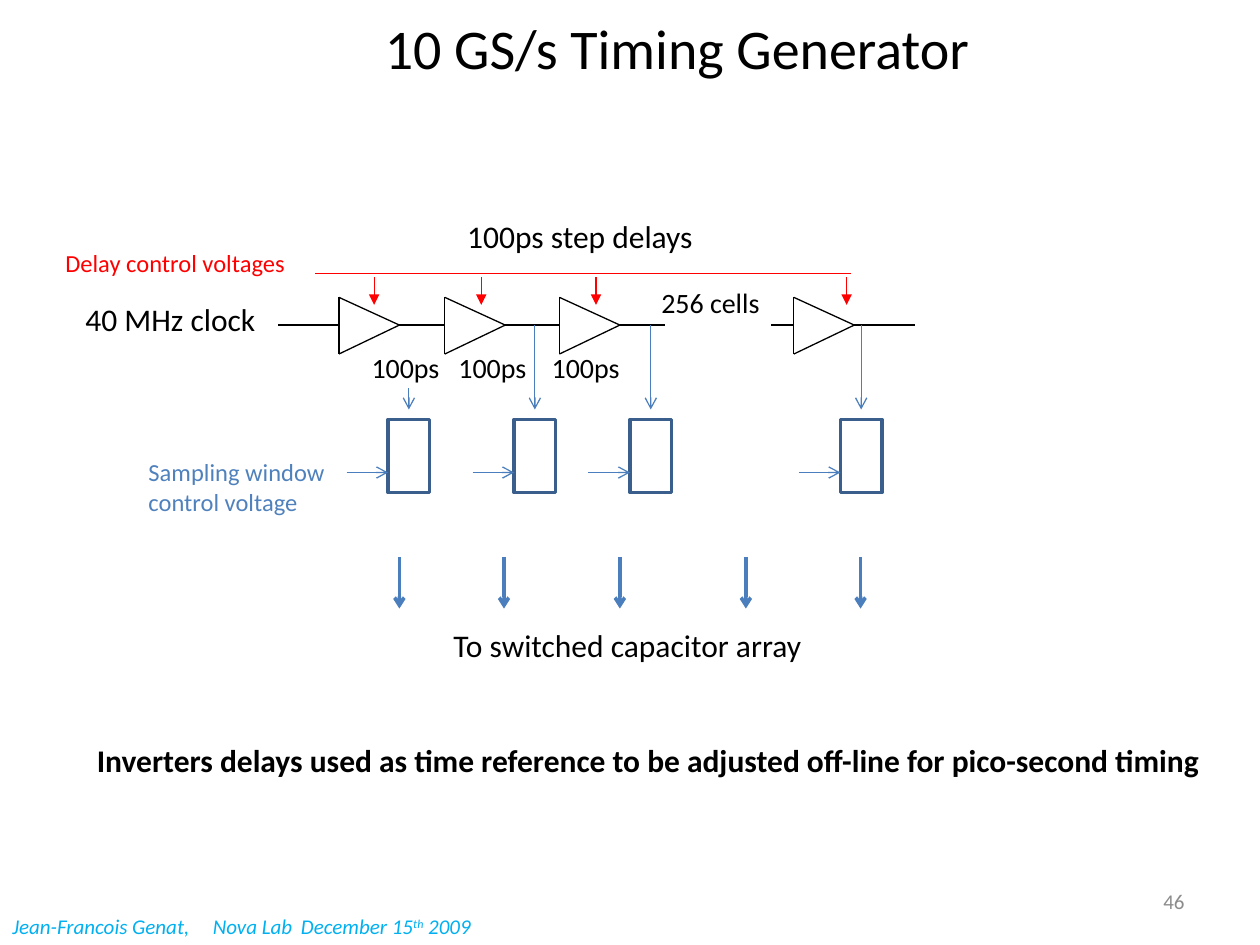
from dataclasses import dataclass

from lxml import etree
from pptx import Presentation
from pptx.dml.color import RGBColor
from pptx.enum.shapes import MSO_CONNECTOR, MSO_SHAPE
from pptx.enum.text import MSO_ANCHOR, PP_ALIGN
from pptx.oxml.ns import qn
from pptx.util import Inches, Pt

STRAIGHT = MSO_CONNECTOR.STRAIGHT
RECTANGLE = MSO_SHAPE.RECTANGLE
LEFT, CENTER, RIGHT = PP_ALIGN.LEFT, PP_ALIGN.CENTER, PP_ALIGN.RIGHT
TOP, MIDDLE = MSO_ANCHOR.TOP, MSO_ANCHOR.MIDDLE

FONT = "Calibri"
COLORS = {
    "black": "000000",
    "red": "FF0000",
    "blue": "4B7EBC",
    "cell_border": "3A5F8C",
    "window_label": "4F81BD",
    "page_number": "8C8C8C",
    "footer": "00B0F0",
}

# Delay line
INVERTER_LEFTS = (2.69, 3.53, 4.44, 6.3)
INVERTER_WIDTH = 0.48
INVERTER_TOP, SIGNAL_Y, INVERTER_BOTTOM = 2.36, 2.58, 2.81
WIRES = ((2.21, 2.69), (3.17, 3.53), (4.01, 4.44), (4.92, 5.28), (6.12, 6.3), (6.78, 7.26))
CONTROL_XS = (2.97, 3.82, 4.73, 6.72)

# Sampling cells
CELL_LEFTS = (3.08, 4.08, 5, 6.67)
CELL_WIDTH, CELL_HEIGHT, CELL_TOP = 0.33, 0.58, 3.33
WINDOW_Y = 3.75
OUTPUT_XS = (3.17, 4, 4.92, 5.92, 6.83)


@dataclass(frozen=True)
class Label:
    text: str
    left: float
    top: float
    width: float
    height: float
    size: int
    color: str = "black"
    align: PP_ALIGN = LEFT
    anchor: MSO_ANCHOR = TOP
    bold: bool = False
    wrap: bool = False
    tabs: tuple[float, ...] = ()


LABELS = (
    Label("10 GS/s Timing Generator", 0.75, 0, 9.25, 0.75, 32, align=CENTER, anchor=MIDDLE, wrap=True),
    Label("100ps\t100ps\t100ps", 2.85, 2.73, 2.45, 0.37, 16, wrap=True, tabs=(0.69, 1.43)),
    Label("256 cells", 5.15, 2.22, 0.99, 0.37, 16),
    Label("100ps step delays", 3.61, 1.67, 2.02, 0.4, 18),
    Label("40 MHz clock", 0.58, 2.33, 1.68, 0.4, 18),
    Label("46", 7.17, 6.95, 2.33, 0.4, 12, "page_number", RIGHT, MIDDLE, wrap=True),
    Label("To switched capacitor array", 3.5, 4.92, 2.99, 0.4, 18),
    Label("Delay control voltages", 0.42, 1.92, 1.96, 0.34, 14, "red"),
    Label("Sampling window\ncontrol voltage", 1.08, 3.58, 1.61, 0.57, 14, "window_label"),
    Label(
        "Inverters delays used as time reference to be adjusted off-line for pico-second timing",
        0.67, 5.83, 9.04, 0.4, 18, bold=True,
    ),
)
FOOTER = Label(
    "Jean-Francois Genat,\tNova Lab\tDecember 15", 0, 7.2, 3.92, 0.3, 12, "footer",
    wrap=True, tabs=(1.59, 2.29),
)


def rgb(color: str) -> RGBColor:
    return RGBColor.from_string(COLORS[color])


def set_tabs(paragraph, positions: tuple[float, ...]) -> None:
    tab_list = etree.SubElement(paragraph._p.get_or_add_pPr(), qn("a:tabLst"))
    for position in positions:
        etree.SubElement(tab_list, qn("a:tab"), pos=str(Inches(position)), algn="l")


def style_run(run, label: Label, italic: bool = False) -> None:
    run.font.name = FONT
    run.font.size = Pt(label.size)
    run.font.bold = label.bold
    run.font.italic = italic
    run.font.color.rgb = rgb(label.color)


def add_label(slide, label: Label):
    box = slide.shapes.add_textbox(
        Inches(label.left), Inches(label.top), Inches(label.width), Inches(label.height)
    )
    frame = box.text_frame
    frame.text = label.text
    frame.word_wrap = label.wrap
    frame.vertical_anchor = label.anchor
    for paragraph in frame.paragraphs:
        paragraph.alignment = label.align
        if label.tabs:
            set_tabs(paragraph, label.tabs)
        for run in paragraph.runs:
            style_run(run, label)
    return frame


def add_footer(slide) -> None:
    """Add the italic credit line with its raised ordinal suffix."""
    paragraph = add_label(slide, FOOTER).paragraphs[0]
    suffix, year = paragraph.add_run(), paragraph.add_run()
    suffix.text, year.text = "th", " 2009"
    for run in paragraph.runs:
        style_run(run, FOOTER, italic=True)
    suffix._r.get_or_add_rPr().set("baseline", "30000")


def add_line(
    slide, x1: float, y1: float, x2: float, y2: float,
    color: str = "black", width: float = 0.75, head: str = "",
) -> None:
    """Draw a straight line, with an arrowhead at its end if head is given."""
    line = slide.shapes.add_connector(STRAIGHT, Inches(x1), Inches(y1), Inches(x2), Inches(y2))
    line.line.color.rgb = rgb(color)
    line.line.width = Pt(width)
    if head:
        etree.SubElement(line.line._get_or_add_ln(), qn("a:tailEnd"), type=head)
    etree.SubElement(line._element.spPr, qn("a:effectLst"))


def add_inverter(slide, left: float) -> None:
    tip = left + INVERTER_WIDTH
    add_line(slide, left, INVERTER_TOP, left, INVERTER_BOTTOM)
    add_line(slide, left, INVERTER_BOTTOM, tip, SIGNAL_Y)
    add_line(slide, left, INVERTER_TOP, tip, SIGNAL_Y)


def add_sampling_cell(slide, left: float, tap_top: float) -> None:
    """Draw a cell with its tap from the delay line and its window control."""
    cell = slide.shapes.add_shape(
        RECTANGLE, Inches(left), Inches(CELL_TOP), Inches(CELL_WIDTH), Inches(CELL_HEIGHT)
    )
    cell.shadow.inherit = False
    cell.fill.background()
    cell.line.color.rgb = rgb("cell_border")
    cell.line.width = Pt(2)
    center = left + CELL_WIDTH / 2
    add_line(slide, center, tap_top, center, 3.25, "blue", head="arrow")
    add_line(slide, left - CELL_WIDTH, WINDOW_Y, left, WINDOW_Y, "blue", head="arrow")


def main() -> None:
    presentation = Presentation()
    presentation.slide_width, presentation.slide_height = Inches(10), Inches(7.5)
    slide = presentation.slides.add_slide(presentation.slide_layouts[6])

    for left in INVERTER_LEFTS:
        add_inverter(slide, left)
    for start, end in WIRES:
        add_line(slide, start, SIGNAL_Y, end, SIGNAL_Y)

    add_line(slide, 2.5, 2.17, 6.75, 2.17, "red")
    for x in CONTROL_XS:
        add_line(slide, x, 2.2, x, 2.42, "red", head="triangle")

    for index, left in enumerate(CELL_LEFTS):
        add_sampling_cell(slide, left, SIGNAL_Y if index else 3.08)
    for x in OUTPUT_XS:
        add_line(slide, x, 4.42, x, 4.83, "blue", 2, "arrow")

    for label in LABELS:
        add_label(slide, label)
    add_footer(slide)
    presentation.save("out.pptx")


if __name__ == "__main__":
    main()
